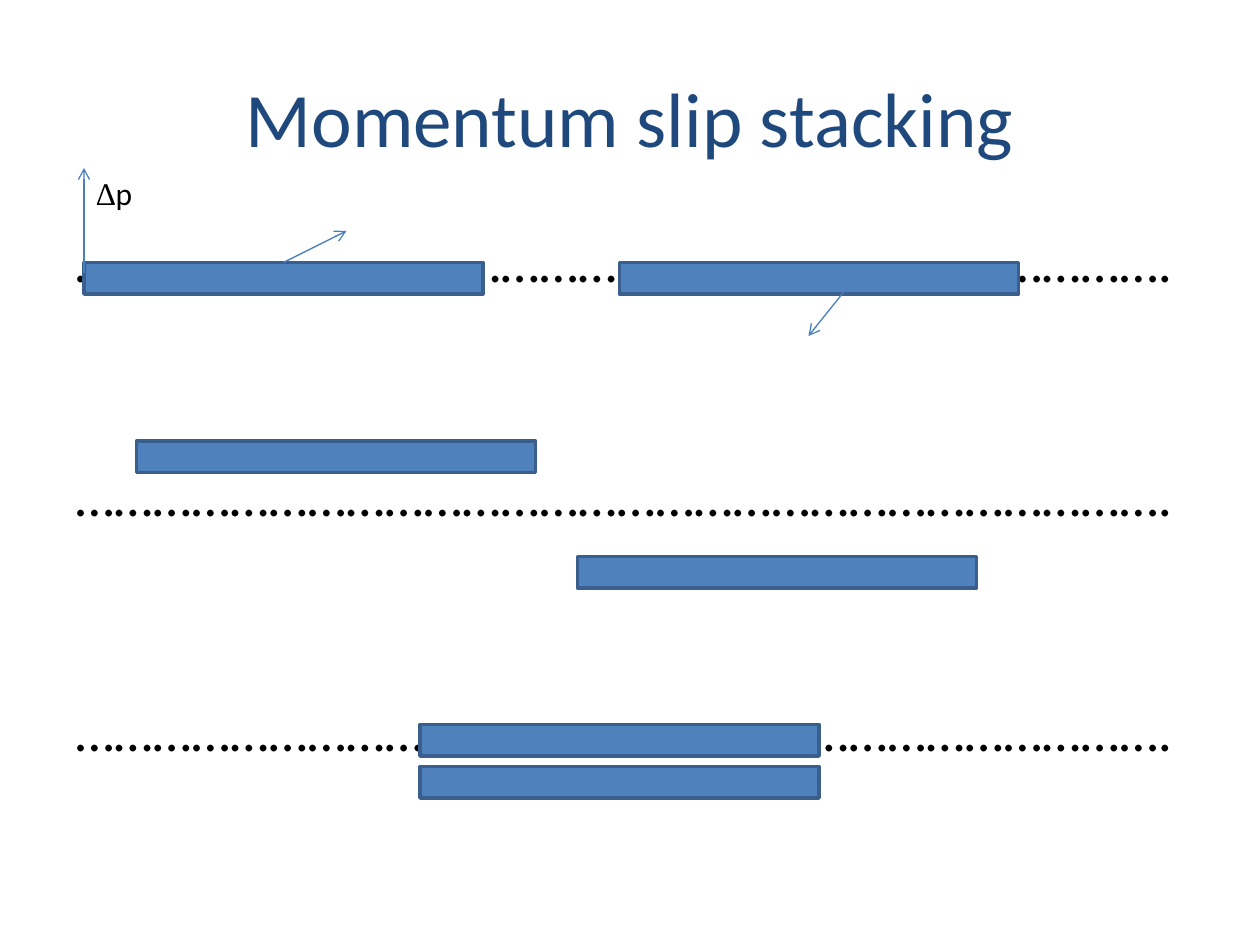
from dataclasses import dataclass

from lxml.etree import SubElement
from pptx import Presentation
from pptx.dml.color import RGBColor
from pptx.enum.shapes import MSO_CONNECTOR, MSO_SHAPE
from pptx.enum.text import MSO_ANCHOR, PP_ALIGN
from pptx.oxml.ns import qn
from pptx.util import Pt

EMU_PER_PX = 9525
BAR_WIDTH, BAR_HEIGHT = 304, 24


@dataclass(frozen=True)
class Theme:
    """Colours, fonts and type sizes of the slide."""
    title: str = "1F497D"
    text: str = "000000"
    bar: str = "4F81BD"
    bar_line: str = "3A5F8C"
    arrow: str = "4B7EBC"
    font: str = "Calibri"
    symbol_font: str = "Times New Roman"
    title_size: int = 44
    body_size: int = 32
    label_size: int = 18
    row_gap: float = 95.5


THEME = Theme()


def px(*lengths):
    """Turn pixel lengths into EMU."""
    return [length * EMU_PER_PX for length in lengths]


def add_text(slide, box, paragraphs, *, size, color=THEME.text,
             align=PP_ALIGN.LEFT, anchor=MSO_ANCHOR.TOP, wrap=True, gap=0):
    """Add a text box whose paragraphs are lists of (text, font) runs."""
    frame = slide.shapes.add_textbox(*px(*box)).text_frame
    frame.word_wrap = wrap
    frame.vertical_anchor = anchor
    for index, runs in enumerate(paragraphs):
        paragraph = frame.add_paragraph() if index else frame.paragraphs[0]
        paragraph.alignment = align
        paragraph.space_after = Pt(gap)
        for text, font in runs:
            run = paragraph.add_run()
            run.text = text
            run.font.name = font
            run.font.size = Pt(size)
            run.font.color.rgb = RGBColor.from_string(color)


def add_bar(slide, left, top):
    """Add one beam bar."""
    shape = slide.shapes.add_shape(
        MSO_SHAPE.RECTANGLE, *px(left, top, BAR_WIDTH, BAR_HEIGHT))
    shape.shadow.inherit = False
    shape.fill.solid()
    shape.fill.fore_color.rgb = RGBColor.from_string(THEME.bar)
    shape.line.color.rgb = RGBColor.from_string(THEME.bar_line)
    shape.line.width = Pt(2)
    return shape


def add_arrow(slide, start, end):
    """Add a thin straight arrow with an open head at its end."""
    connector = slide.shapes.add_connector(
        MSO_CONNECTOR.STRAIGHT, *px(*start, *end))
    connector.line.color.rgb = RGBColor.from_string(THEME.arrow)
    connector.line.width = Pt(0.75)
    SubElement(connector.line._get_or_add_ln(), qn("a:tailEnd"), type="arrow")
    SubElement(connector._element.spPr, qn("a:effectLst"))
    return connector


def main():
    """Build the slide and save it."""
    presentation = Presentation()
    presentation.slide_width, presentation.slide_height = px(960, 720)
    slide = presentation.slides.add_slide(presentation.slide_layouts[6])

    add_text(slide, (48, 29, 864, 120),
             [[("Momentum slip stacking", THEME.font)]],
             size=THEME.title_size, color=THEME.title,
             align=PP_ALIGN.CENTER, anchor=MSO_ANCHOR.MIDDLE)
    dotted_row = [("…" * 28 + ".", THEME.font)]
    add_text(slide, (48, 168, 864, 475), [dotted_row] * 3,
             size=THEME.body_size, gap=THEME.row_gap)

    first_bar = add_bar(slide, 64, 200)
    add_bar(slide, 472, 200)
    rising_arrow = add_arrow(slide, (216, 200), (264, 176))
    rising_arrow.begin_connect(first_bar, 0)
    add_arrow(slide, (648, 216), (616, 256))
    for left, top in ((104, 336), (440, 424), (320, 552), (320, 584)):
        add_bar(slide, left, top)

    add_arrow(slide, (64, 208), (64, 128))
    add_text(slide, (64, 128, 48, 38),
             [[("∆", THEME.symbol_font), ("p", THEME.font)]],
             size=THEME.label_size, wrap=False)
    presentation.save("out.pptx")


if __name__ == "__main__":
    main()
